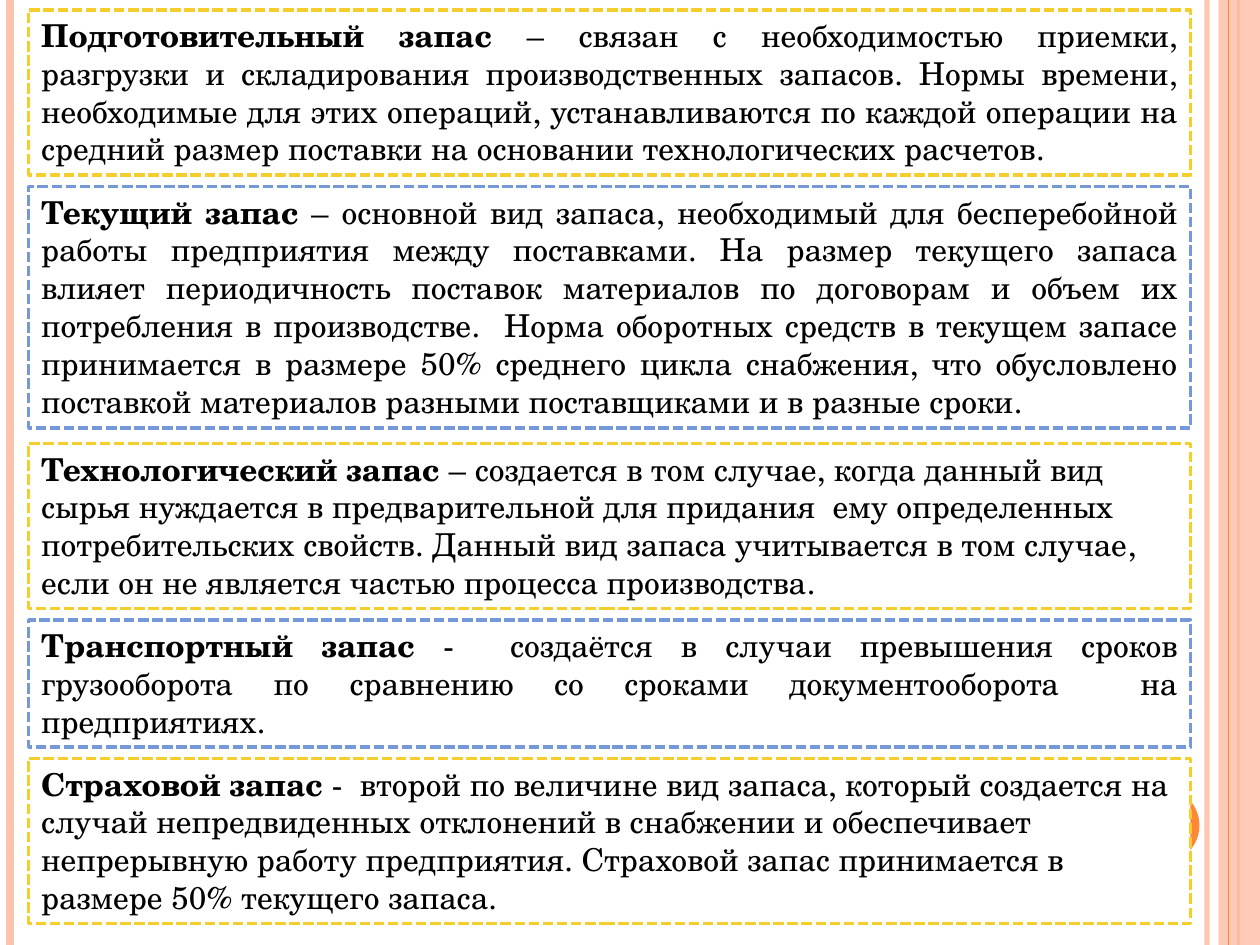
"""Build a slide describing five kinds of production stock."""
import lxml.etree
import pptx
import pptx.dml.color
import pptx.enum.dml
import pptx.enum.shapes
import pptx.enum.text
import pptx.oxml.ns
import pptx.util

Cm = pptx.util.Cm
Pt = pptx.util.Pt
RGBColor = pptx.dml.color.RGBColor
SHAPES = pptx.enum.shapes.MSO_SHAPE
ALIGN = pptx.enum.text.PP_ALIGN

WHITE = RGBColor(0xFF, 0xFF, 0xFF)
BLACK = RGBColor(0x00, 0x00, 0x00)
PEACH = RGBColor(0xFE, 0xC3, 0xAE)
ORANGE = RGBColor(0xFE, 0x86, 0x37)
YELLOW = RGBColor(0xF5, 0xCD, 0x2D)
BLUE = RGBColor(0x75, 0x98, 0xD9)

FONT = "TeX Gyre Schola"
PAGE_WIDTH, PAGE_HEIGHT = 25.4, 19.05
BOX_LEFT, BOX_WIDTH = 0.58, 23.42
LINE_HEIGHT, BOX_PADDING = 0.77, 0.25

STOCKS = [
    (0.2, 4, ALIGN.JUSTIFY, "Подготовительный запас",
     " – связан с необходимостью приемки, разгрузки и складирования "
     "производственных запасов. Нормы времени, необходимые для этих операций, "
     "устанавливаются по каждой операции на средний размер поставки на "
     "основании технологических расчетов."),
    (3.76, 6, ALIGN.JUSTIFY, "Текущий запас",
     " – основной вид запаса, необходимый для бесперебойной работы предприятия "
     "между поставками. На размер текущего запаса влияет периодичность "
     "поставок материалов по договорам и объем их потребления в производстве.  "
     "Норма оборотных средств в текущем запасе принимается в размере 50% "
     "среднего цикла снабжения, что обусловлено поставкой материалов разными "
     "поставщиками и в разные сроки."),
    (8.94, 4, ALIGN.LEFT, "Технологический запас",
     " – создается в том случае, когда данный вид сырья нуждается в "
     "предварительной для придания  ему определенных потребительских свойств. "
     "Данный вид запаса учитывается в том случае, если он не является частью "
     "процесса производства."),
    (12.5, 3, ALIGN.JUSTIFY, "Транспортный запас ",
     "-  создаётся в случаи превышения сроков грузооборота по сравнению со "
     "сроками документооборота  на предприятиях."),
    (15.29, 4, ALIGN.LEFT, "Страховой запас",
     " -  второй по величине вид запаса, который создается на случай "
     "непредвиденных отклонений в снабжении и обеспечивает непрерывную работу "
     "предприятия. Страховой запас принимается в размере 50% текущего запаса."),
]


def set_alpha(element, percent):
    """Make the solid colour inside an element partly transparent."""
    color = element.find(".//" + pptx.oxml.ns.qn("a:srgbClr"))
    alpha = lxml.etree.SubElement(color, pptx.oxml.ns.qn("a:alpha"))
    alpha.set("val", str(percent * 1000))


def add_stripe(page, x, color, weight, opacity=100):
    """Draw a vertical line over the full height of the page."""
    stripe = page.shapes.add_connector(
        pptx.enum.shapes.MSO_CONNECTOR.STRAIGHT, Cm(x), Cm(0), Cm(x), Cm(PAGE_HEIGHT))
    stripe.line.color.rgb = color
    stripe.line.width = Pt(weight)
    properties = stripe._element.spPr
    if opacity < 100:
        set_alpha(properties, opacity)
    lxml.etree.SubElement(properties, pptx.oxml.ns.qn("a:effectLst"))


def add_filled_shape(page, kind, left, top, width, height, color):
    """Add a flat shape without an outline and return it."""
    shape = page.shapes.add_shape(kind, Cm(left), Cm(top), Cm(width), Cm(height))
    shape.shadow.inherit = False
    shape.fill.solid()
    shape.fill.fore_color.rgb = color
    shape.line.fill.background()
    return shape


def add_span(para, text, bold):
    """Append a run of body text to a paragraph."""
    span = para.add_run()
    span.text = text
    span.font.name = FONT
    span.font.size = Pt(18)
    span.font.bold = bold
    span.font.color.rgb = BLACK


def add_stock_box(page, top, line_count, alignment, term, definition, color):
    """Add a dashed box holding a term and its definition."""
    height = BOX_PADDING + LINE_HEIGHT * line_count
    box = add_filled_shape(page, SHAPES.RECTANGLE, BOX_LEFT, top, BOX_WIDTH, height, WHITE)
    box.line.color.rgb = color
    box.line.width = Pt(2)
    box.line.dash_style = pptx.enum.dml.MSO_LINE.SQUARE_DOT
    frame = box.text_frame
    frame.word_wrap = True
    frame.auto_size = pptx.enum.text.MSO_AUTO_SIZE.SHAPE_TO_FIT_TEXT
    frame.vertical_anchor = pptx.enum.text.MSO_ANCHOR.TOP
    para = frame.paragraphs[0]
    para.alignment = alignment
    add_span(para, term, True)
    add_span(para, definition, False)


def add_decoration(page):
    """Draw the stripes, the side band and the disc."""
    add_stripe(page, 24.33, PEACH, 3, 93)
    add_stripe(page, 0.2, PEACH, 4.5)
    add_stripe(page, 24.97, ORANGE, 1.5)
    band = add_filled_shape(page, SHAPES.RECTANGLE, 24.56, 0, 0.84, PAGE_HEIGHT, PEACH)
    set_alpha(band._element.spPr, 87)
    add_stripe(page, 24.77, ORANGE, 0.75)
    add_filled_shape(page, SHAPES.OVAL, 22.66, 15.88, 1.52, 1.52, ORANGE)


def main():
    """Build and save the deck."""
    deck = pptx.Presentation()
    deck.slide_width = Cm(PAGE_WIDTH)
    deck.slide_height = Cm(PAGE_HEIGHT)
    page = deck.slides.add_slide(deck.slide_layouts[6])
    add_decoration(page)
    for index, stock in enumerate(STOCKS):
        add_stock_box(page, *stock, (YELLOW, BLUE)[index % 2])
    deck.save("out.pptx")


if __name__ == "__main__":
    main()
